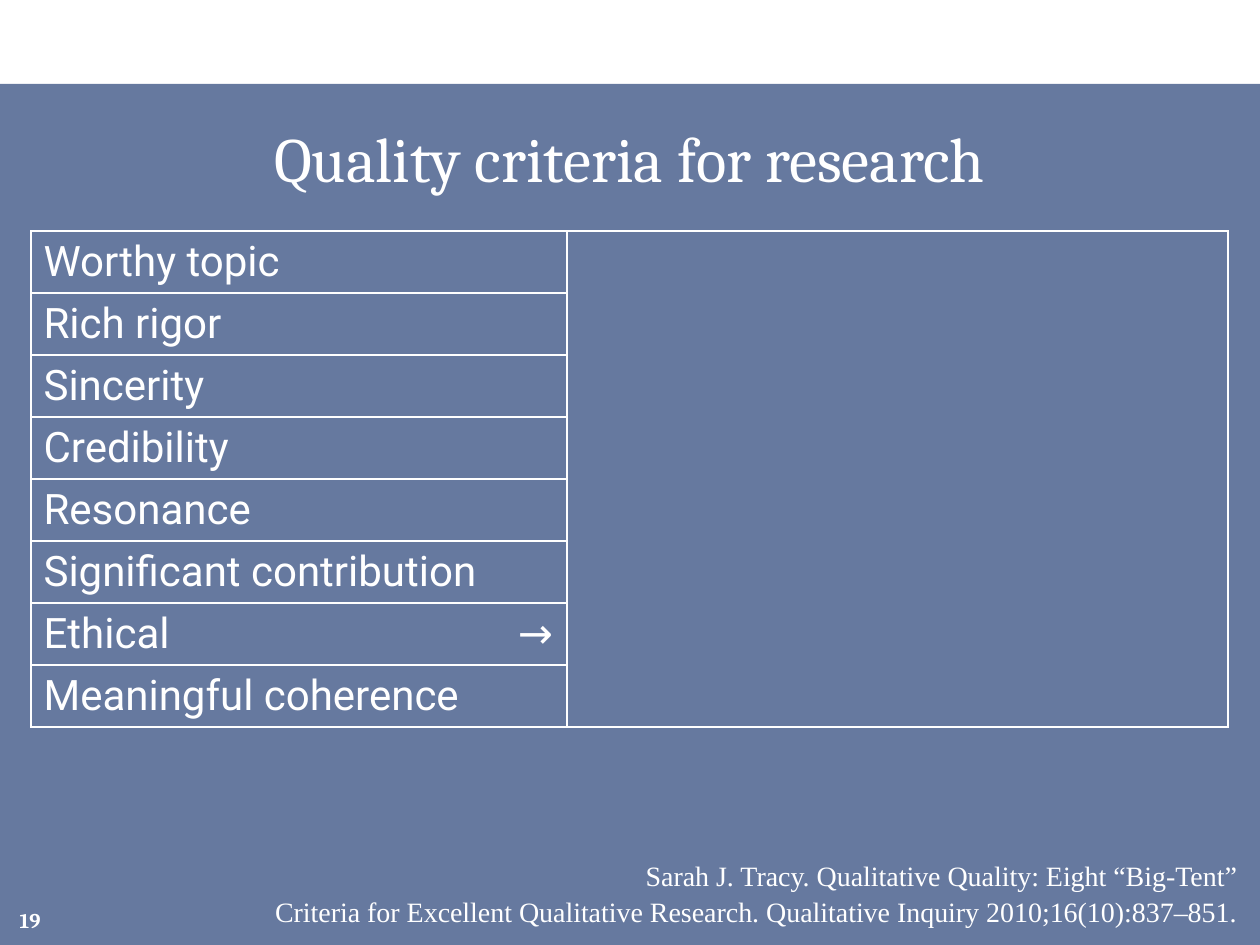
from dataclasses import dataclass

from lxml.etree import SubElement
from pptx import Presentation
from pptx.dml.color import RGBColor
from pptx.enum.shapes import MSO_SHAPE
from pptx.enum.text import MSO_ANCHOR, PP_ALIGN
from pptx.oxml.ns import qn
from pptx.util import Pt

PX = 914400 / 126  # EMU in one px
COLORS = {"panel": "002060", "text": "FFFFFF", "border": "FFFFFF"}
NO_STYLE = "{2D5ABB26-0587-4C30-8999-92F81FD0307C}"
BORDER_WIDTH = Pt(1)
ARROW_ROW = 6
COLUMN_WIDTHS = [473, 63, 661]
COLUMN_BORDERS = [("L", "T", "B"), ("R", "T", "B"), ("L", "R", "T", "B")]
ROW_HEIGHT = 62
CRITERIA = [
    "Worthy topic", "Rich rigor", "Sincerity", "Credibility", "Resonance",
    "Significant contribution", "Ethical", "Meaningful coherence",
]


@dataclass(frozen=True)
class Box:
    left: int
    top: int
    width: int
    height: int

    def emu(self) -> list[int]:
        return [px(value) for value in (self.left, self.top, self.width, self.height)]


@dataclass(frozen=True)
class Style:
    font: str
    size: int
    align: PP_ALIGN
    bold: bool = False
    line_spacing: float = 1.0


@dataclass(frozen=True)
class Note:
    box: Box
    lines: list[str]
    style: Style
    anchor: MSO_ANCHOR = MSO_ANCHOR.TOP


TITLE_STYLE = Style("Cambria", 36, PP_ALIGN.CENTER)
CRITERION_STYLE = Style("Roboto", 24, PP_ALIGN.LEFT)
ARROW_STYLE = Style("Roboto", 24, PP_ALIGN.CENTER)
NOTES = [
    Note(
        Box(164, 851, 1086, 80),
        [
            "Sarah J. Tracy. Qualitative Quality: Eight “Big-Tent”",
            "Criteria for Excellent Qualitative Research. Qualitative Inquiry 2010;16(10):837–851.",
        ],
        Style("Times New Roman", 16, PP_ALIGN.RIGHT, line_spacing=1.05),
    ),
    Note(Box(0, 895, 53, 50), ["19"],
         Style("Cambria", 12, PP_ALIGN.RIGHT, bold=True), MSO_ANCHOR.MIDDLE),
]


def px(value: int) -> int:
    return round(value * PX)


def write(frame, lines: list[str], style: Style) -> None:
    frame.text = "\n".join(lines)
    for paragraph in frame.paragraphs:
        paragraph.alignment = style.align
        paragraph.line_spacing = style.line_spacing
        for run in paragraph.runs:
            values = {"name": style.font, "size": Pt(style.size), "bold": style.bold}
            for name, value in values.items():
                setattr(run.font, name, value)
            run.font.color.rgb = RGBColor.from_string(COLORS["text"])


def add_panel(slide, box: Box) -> None:
    panel = slide.shapes.add_shape(MSO_SHAPE.RECTANGLE, *box.emu())
    panel.shadow.inherit = False
    panel.line.fill.background()
    panel.fill.solid()
    panel.fill.fore_color.rgb = RGBColor.from_string(COLORS["panel"])
    color = panel.fill._xPr.find(".//" + qn("a:srgbClr"))
    SubElement(color, qn("a:alpha"), val="60000")
    # Send the panel behind the title
    slide.shapes._spTree.insert(2, panel._element)


def add_title(slide, box: Box, text: str) -> None:
    title = slide.shapes.title
    for name, value in zip(("left", "top", "width", "height"), box.emu()):
        setattr(title, name, value)
    title.text_frame.vertical_anchor = MSO_ANCHOR.MIDDLE
    write(title.text_frame, [text], TITLE_STYLE)


def format_cell(cell, sides: tuple[str, ...]) -> None:
    properties = cell._tc.get_or_add_tcPr()
    for side in sides:
        line = SubElement(properties, qn(f"a:ln{side}"), w=str(BORDER_WIDTH))
        fill = SubElement(line, qn("a:solidFill"))
        SubElement(fill, qn("a:srgbClr"), val=COLORS["border"])
    cell.fill.background()


def add_criteria_table(slide, left: int, top: int) -> None:
    box = Box(left, top, sum(COLUMN_WIDTHS), ROW_HEIGHT * len(CRITERIA))
    frame = slide.shapes.add_table(len(CRITERIA), len(COLUMN_WIDTHS), *box.emu())
    table = frame.table
    table.first_row = table.horz_banding = False
    table._tbl.tblPr.find(qn("a:tableStyleId")).text = NO_STYLE
    for column, width in zip(table.columns, COLUMN_WIDTHS):
        column.width = px(width)
    for index, criterion in enumerate(CRITERIA):
        table.rows[index].height = px(ROW_HEIGHT)
        for column, sides in enumerate(COLUMN_BORDERS):
            format_cell(table.cell(index, column), sides)
        write(table.cell(index, 0).text_frame, [criterion], CRITERION_STYLE)
    write(table.cell(ARROW_ROW, 1).text_frame, ["→"], ARROW_STYLE)
    table.cell(0, 2).merge(table.cell(len(CRITERIA) - 1, 2))


def add_note(slide, note: Note) -> None:
    frame = slide.shapes.add_textbox(*note.box.emu()).text_frame
    frame.word_wrap = True
    frame.vertical_anchor = note.anchor
    write(frame, note.lines, note.style)


def main() -> None:
    presentation = Presentation()
    presentation.slide_width, presentation.slide_height = px(1260), px(945)
    slide = presentation.slides.add_slide(presentation.slide_layouts[5])

    # Background and title
    add_panel(slide, Box(0, 84, 1260, 861))
    add_title(slide, Box(31, 105, 1197, 105), "Quality criteria for research")

    # Criteria, then the citation and page number
    add_criteria_table(slide, 31, 231)
    for note in NOTES:
        add_note(slide, note)

    presentation.save("out.pptx")


if __name__ == "__main__":
    main()
